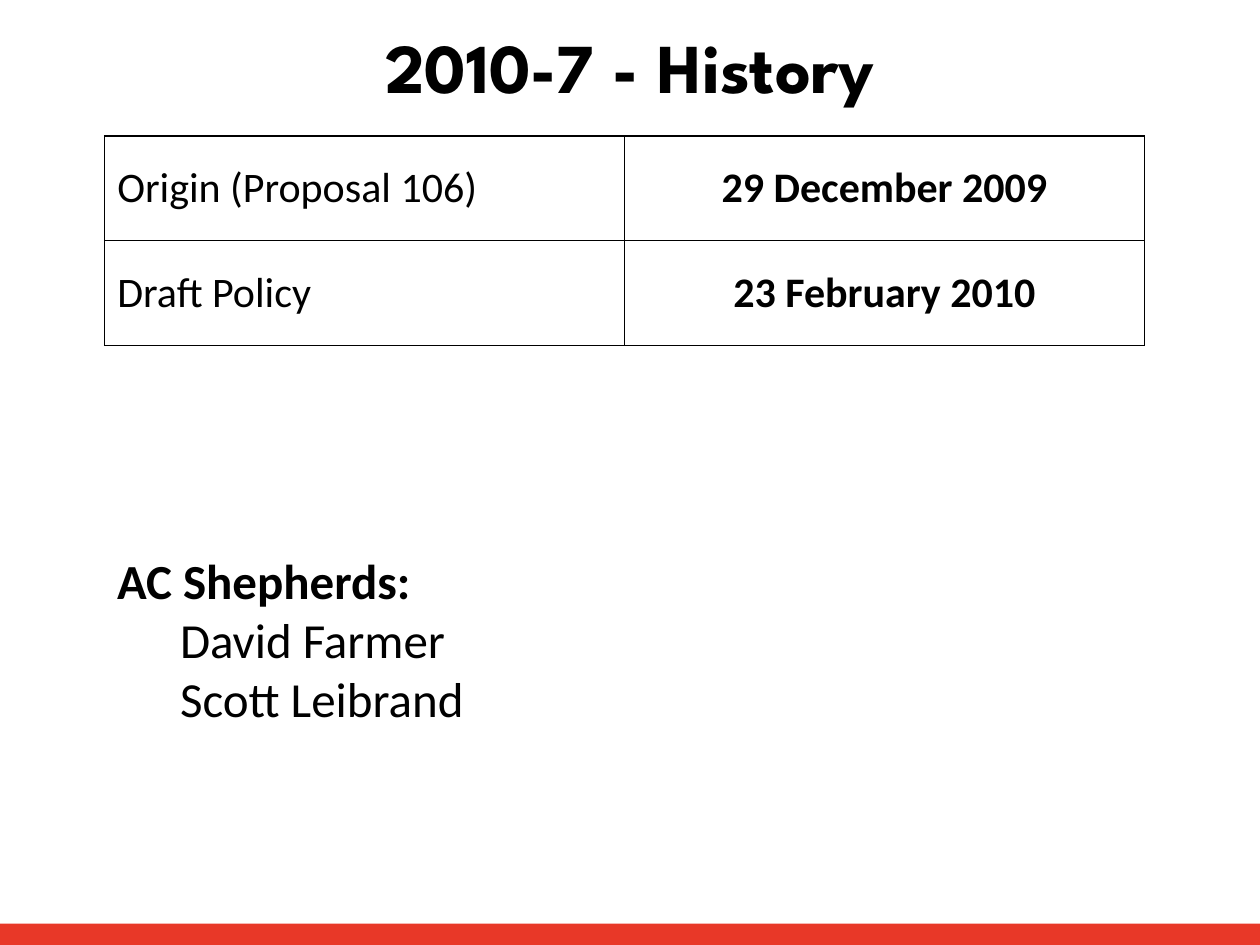
from dataclasses import dataclass

from lxml import etree
from pptx import Presentation
from pptx.dml.color import RGBColor
from pptx.enum.shapes import MSO_SHAPE
from pptx.enum.text import MSO_ANCHOR, PP_ALIGN
from pptx.oxml.ns import qn
from pptx.util import Cm, Pt

RECTANGLE = MSO_SHAPE.RECTANGLE
TOP, MIDDLE = MSO_ANCHOR.TOP, MSO_ANCHOR.MIDDLE
LEFT, CENTER = PP_ALIGN.LEFT, PP_ALIGN.CENTER

TITLE = "2010-7 - History"
HISTORY = [
    ("Origin (Proposal 106)", "29 December 2009"),
    ("Draft Policy", "23 February 2010"),
]
SHEPHERDS_HEADING = "AC Shepherds:"
SHEPHERDS = ["David Farmer", "Scott Leibrand"]


@dataclass(frozen=True)
class Theme:
    ink: str = "000000"
    paper: str = "FFFFFF"
    accent: str = "E83828"
    title_font: str = "League Spartan"
    body_font: str = "Calibri"
    title_size: int = 40
    table_size: int = 24
    list_size: int = 28
    border: int = 1


THEME = Theme()
PAGE_WIDTH, PAGE_HEIGHT = 25.4, 19.05
MARGIN = 2.11
COLUMN_WIDTH, ROW_HEIGHT = 10.48, 2.11
NAME_INDENT = 1.27
BAR_TOP, BAR_HEIGHT = 18.62, 0.45


def add_span(para, text, size, bold=False, font=THEME.body_font, align=LEFT):
    para.alignment = align
    span = para.add_run()
    span.text = text
    span.font.name = font
    span.font.size = Pt(size)
    span.font.bold = bold
    span.font.color.rgb = RGBColor.from_string(THEME.ink)


def add_box(page, left, top, width, height, anchor):
    box = page.shapes.add_textbox(Cm(left), Cm(top), Cm(width), Cm(height))
    frame = box.text_frame
    frame.word_wrap = True
    frame.vertical_anchor = anchor
    return frame


def paint(target, color):
    target.fill.solid()
    target.fill.fore_color.rgb = RGBColor.from_string(color)


def add_borders(cell):
    properties = cell._tc.get_or_add_tcPr()
    for position, side in enumerate(("a:lnL", "a:lnR", "a:lnT", "a:lnB")):
        line = etree.Element(qn(side), w=str(Pt(THEME.border)))
        fill = etree.SubElement(line, qn("a:solidFill"))
        etree.SubElement(fill, qn("a:srgbClr"), val=THEME.ink)
        properties.insert(position, line)


def add_bar(page):
    bar = page.shapes.add_shape(
        RECTANGLE, Cm(0), Cm(BAR_TOP), Cm(PAGE_WIDTH), Cm(BAR_HEIGHT))
    bar.shadow.inherit = False
    bar.line.fill.background()
    paint(bar, THEME.accent)


def add_title(page):
    frame = add_box(page, 1.27, 0.33, PAGE_WIDTH - 2 * 1.27, 1.98, MIDDLE)
    add_span(frame.paragraphs[0], TITLE, THEME.title_size, True,
             THEME.title_font, CENTER)


def add_history(page):
    rows, columns = len(HISTORY), len(HISTORY[0])
    table = page.shapes.add_table(
        rows, columns, Cm(MARGIN), Cm(2.74),
        Cm(columns * COLUMN_WIDTH), Cm(rows * ROW_HEIGHT)).table
    table.first_row = table.horz_banding = False
    for row, entry in enumerate(HISTORY):
        for column, text in enumerate(entry):
            cell = table.cell(row, column)
            is_date = column == 1
            cell.vertical_anchor = MIDDLE
            paint(cell, THEME.paper)
            add_borders(cell)
            add_span(cell.text_frame.paragraphs[0], text, THEME.table_size,
                     is_date, align=CENTER if is_date else LEFT)


def add_shepherds(page):
    frame = add_box(page, MARGIN, 10.97, 10.36, 3.84, TOP)
    add_span(frame.paragraphs[0], SHEPHERDS_HEADING, THEME.list_size, True)
    for name in SHEPHERDS:
        para = frame.add_paragraph()
        add_span(para, name, THEME.list_size)
        para._p.get_or_add_pPr().set("marL", str(Cm(NAME_INDENT)))


def main():
    deck = Presentation()
    deck.slide_width, deck.slide_height = Cm(PAGE_WIDTH), Cm(PAGE_HEIGHT)
    page = deck.slides.add_slide(deck.slide_layouts[6])
    paint(page.background, THEME.paper)
    add_bar(page)
    add_history(page)
    add_shepherds(page)
    add_title(page)
    deck.save("out.pptx")


if __name__ == "__main__":
    main()
